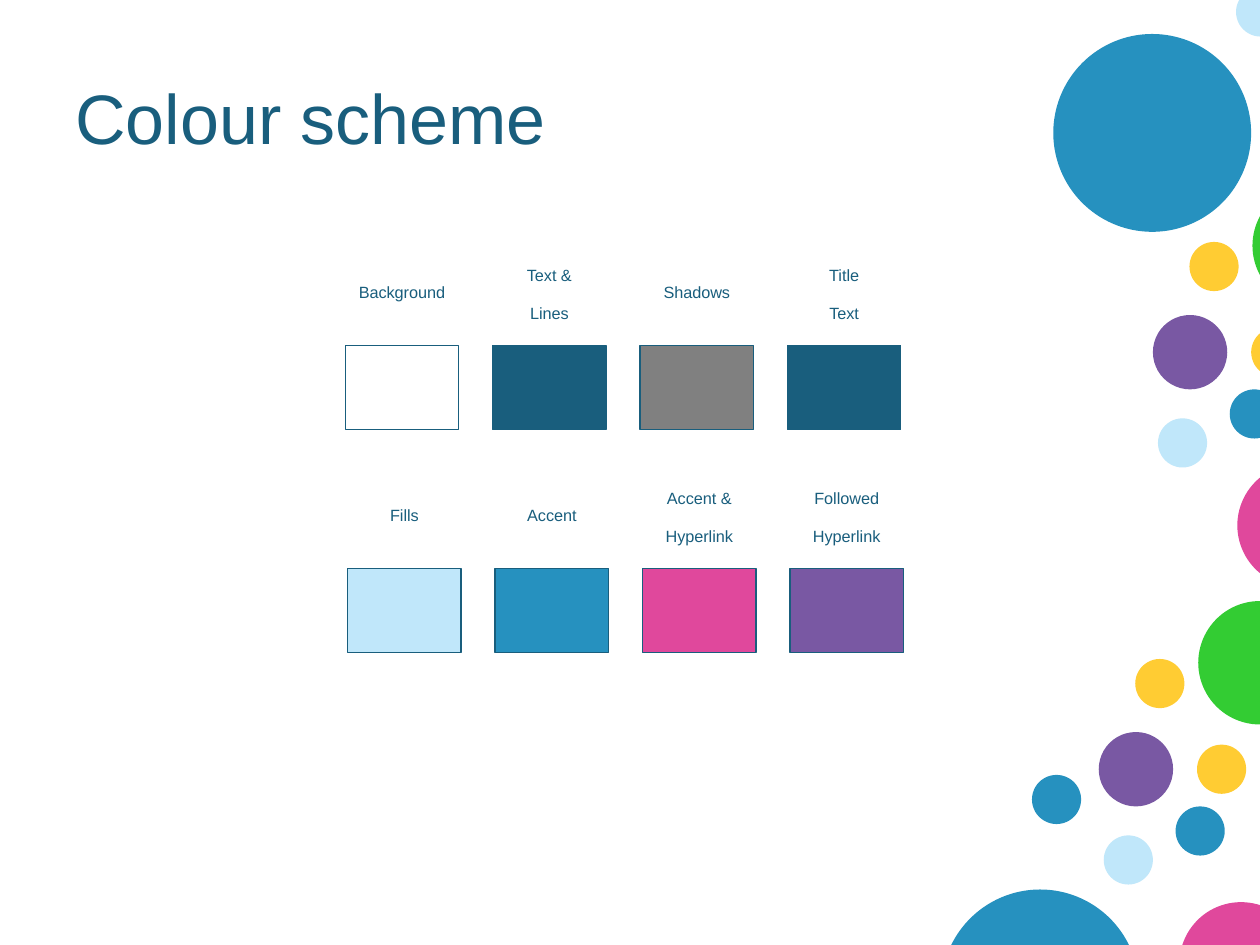
from pptx import Presentation
from pptx.dml.color import RGBColor
from pptx.enum.shapes import MSO_SHAPE
from pptx.enum.text import MSO_ANCHOR, MSO_AUTO_SIZE, PP_ALIGN
from pptx.util import Inches, Pt

COLOURS = {
    "white": "FFFFFF", "navy": "195E7D", "grey": "808080",
    "sky": "C0E7FA", "blue": "2691BF", "pink": "E0489C",
    "purple": "7958A3", "green": "33CC33", "yellow": "FFCC33",
}
SMALL, MEDIUM, LARGE, HUGE = 0.39, 0.59, 0.98, 1.57

# Circles as (left, top, diameter, colour); the cluster is relative to its box
CLUSTER = [
    (0.79, 0, LARGE, "green"), (0.29, 0.46, SMALL, "yellow"),
    (0, 1.04, MEDIUM, "purple"), (0.78, 1.14, SMALL, "yellow"),
    (0.04, 1.86, SMALL, "sky"), (0.61, 1.63, SMALL, "blue"),
]
SINGLE_CIRCLES = [
    (9.82, 3.68, LARGE, "pink"), (8.19, 6.15, SMALL, "blue"),
    (8.36, 0.27, HUGE, "blue"), (7.47, 7.06, HUGE, "blue"),
    (9.36, 7.16, LARGE, "pink"), (9.81, -0.1, SMALL, "sky"),
]

# Swatches as (label, label width, colour); \v breaks a line in a paragraph
TOP_SWATCHES = [
    ("Background", 1.39, "white"), ("Text &\nLines", 0.84, "navy"),
    ("Shadows", 1.11, "grey"), ("Title\vText", 0.63, "navy"),
]
BOTTOM_SWATCHES = [
    ("Fills", 0.59, "sky"), ("Accent", 0.88, "blue"),
    ("Accent &\nHyperlink", 1.12, "pink"),
    ("Followed\nHyperlink", 1.12, "purple"),
]
SWATCH_WIDTH, SWATCH_HEIGHT, SWATCH_PITCH = 0.9, 0.67, 1.17
LABEL_RISE = 0.51  # from the top of a swatch up to the middle of its label


def rgb(name):
    return RGBColor.from_string(COLOURS[name])


def add_filled(page, kind, left, top, width, height, colour, outline=None):
    shape = page.shapes.add_shape(
        kind, Inches(left), Inches(top), Inches(width), Inches(height))
    shape.shadow.inherit = False
    shape.fill.solid()
    shape.fill.fore_color.rgb = rgb(colour)
    if outline:
        shape.line.color.rgb = rgb(outline)
        shape.line.width = Pt(0.75)
    else:
        shape.line.fill.background()


def add_text(page, left, top, width, height, text, size):
    box = page.shapes.add_textbox(
        Inches(left), Inches(top), Inches(width), Inches(height))
    frame = box.text_frame
    frame.text = text
    for para in frame.paragraphs:
        para.font.size = Pt(size)
        para.font.name = "Arial"
        para.font.color.rgb = rgb("navy")
    return frame


def add_circles(page, left, top, circles):
    for x, y, diameter, colour in circles:
        add_filled(page, MSO_SHAPE.OVAL, left + x, top + y,
                   diameter, diameter, colour)


def add_title(page, left, top, width, height):
    frame = add_text(page, left, top, width, height, "Colour scheme", 40)
    frame.word_wrap = True
    frame.vertical_anchor = MSO_ANCHOR.MIDDLE


def add_label(page, centre, middle, width, text):
    """Centre a subscript label on the given point."""
    height = 0.64 if "\n" in text or "\v" in text else 0.37
    frame = add_text(page, centre - width / 2, middle - height / 2,
                     width, height, text, 16)
    frame.word_wrap = False
    frame.auto_size = MSO_AUTO_SIZE.SHAPE_TO_FIT_TEXT
    for para in frame.paragraphs:
        para.alignment = PP_ALIGN.CENTER
        for span in para.runs:
            span._r.get_or_add_rPr().set("baseline", "-25000")


def add_swatch_row(page, left, top, swatches):
    for column, (label, label_width, colour) in enumerate(swatches):
        x = left + column * SWATCH_PITCH
        add_filled(page, MSO_SHAPE.RECTANGLE, x, top,
                   SWATCH_WIDTH, SWATCH_HEIGHT, colour, "navy")
        add_label(page, x + SWATCH_WIDTH / 2, top - LABEL_RISE,
                  label_width, label)


def main():
    deck = Presentation()
    deck.slide_width, deck.slide_height = Inches(10), Inches(7.5)
    page = deck.slides.add_slide(deck.slide_layouts[6])
    page.background.fill.solid()
    page.background.fill.fore_color.rgb = rgb("white")

    add_circles(page, 8.72, 4.77, CLUSTER)
    add_circles(page, 9.15, 1.46, CLUSTER)
    add_circles(page, 0, 0, SINGLE_CIRCLES)
    add_title(page, 0.5, 0.3, 7.91, 1.25)
    add_swatch_row(page, 2.74, 2.74, TOP_SWATCHES)
    add_swatch_row(page, 2.76, 4.51, BOTTOM_SWATCHES)
    deck.save("out.pptx")


if __name__ == "__main__":
    main()
